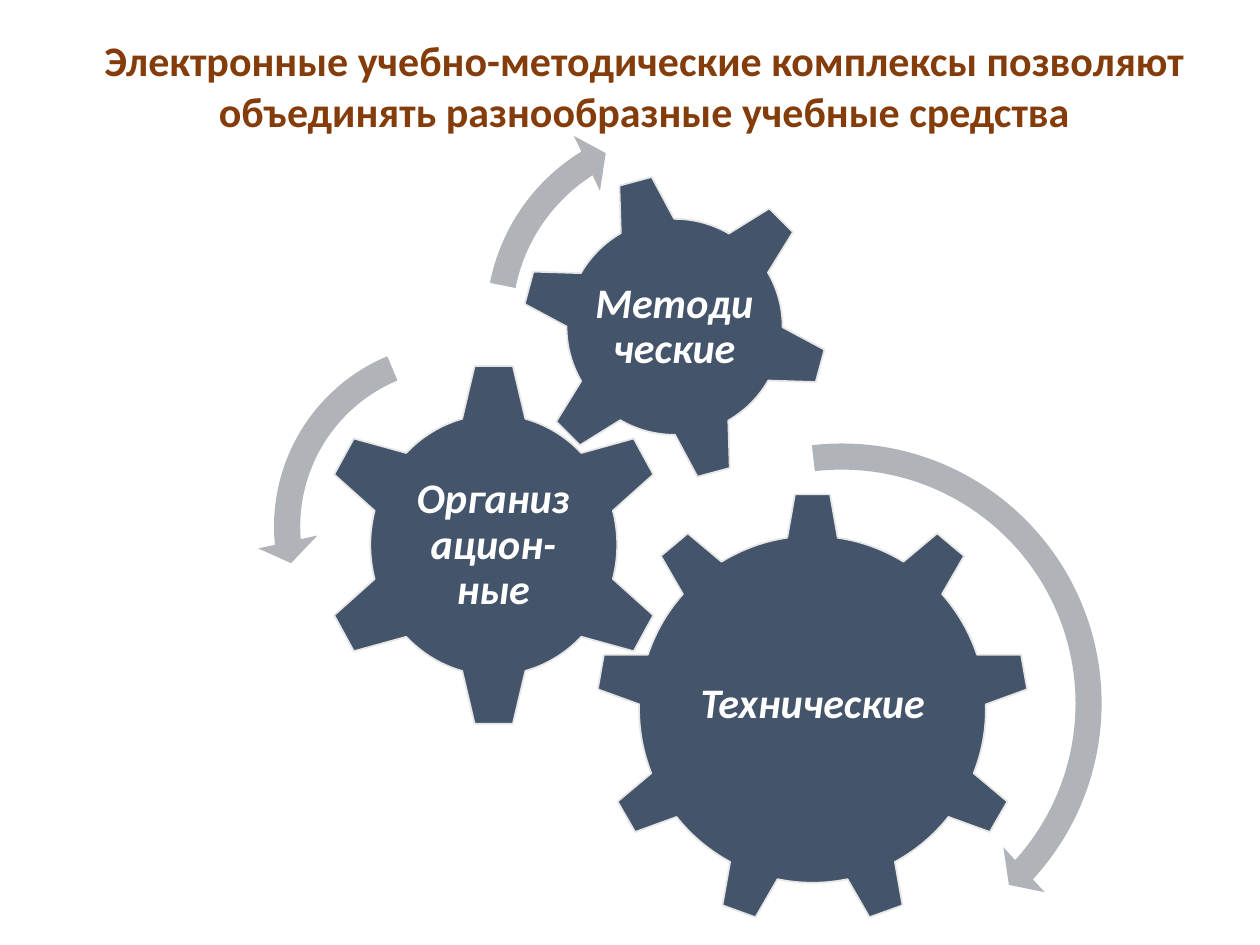
from pptx import Presentation
from pptx.dml.color import RGBColor
from pptx.enum.shapes import MSO_SHAPE
from pptx.enum.text import MSO_ANCHOR, PP_ALIGN
from pptx.util import Cm, Pt

COLORS = {"gear": "44546A", "edge": "E7E6E6", "arrow": "B0B4B9",
          "label": "FFFFFF", "title": "843C0B"}
FONT = "Calibri"

TITLE = ("Электронные учебно-методические комплексы позволяют "
         "объединять разнообразные учебные средства")
TITLE_BOX = (0.58, 0.58, 24.82, 2.31)

# Boxes are left, top, width, height in centimetres
GEARS = [
    {"text": "Технические", "shape": MSO_SHAPE.GEAR_9, "turn": 0,
     "box": (12.01, 9.93, 8.74, 8.74), "label": (13.77, 11.96, 5.23, 4.5)},
    {"text": "Организацион-ные", "shape": MSO_SHAPE.GEAR_6, "turn": 0,
     "box": (6.4, 7.29, 7.11, 7.39), "label": (8.18, 9.14, 3.53, 3.71)},
    {"text": "Методические", "shape": MSO_SHAPE.GEAR_6, "turn": 345,
     "box": (10.49, 3.48, 6.22, 6.22), "label": (11.84, 4.85, 3.51, 3.51)},
]

# Band and head widths are percentages of the size; angles are degrees
ARROWS = [
    {"shape": MSO_SHAPE.CIRCULAR_ARROW, "turn": 0, "box": (11.38, 8.59, 11.18, 11.18),
     "band": 4.7, "angles": (4.98, 42.39, 263.39), "head": 5.5},
    {"shape": MSO_SHAPE.LEFT_CIRCULAR_ARROW, "turn": 0, "box": (5.18, 6.55, 8.13, 8.13),
     "band": 6.5, "angles": (7.17, 174.82, 247.3), "head": 7.5},
    {"shape": MSO_SHAPE.CIRCULAR_ARROW, "turn": 16.1, "box": (9.45, 2.11, 8.76, 8.76),
     "band": 6, "angles": (6.57, 221.9, 175.14), "head": 7},
]
ANGLE_UNIT = 0.6  # one degree in adjustment units


def color(name):
    return RGBColor.from_string(COLORS[name])


def add_figure(page, item, fill):
    figure = page.shapes.add_shape(item["shape"], *map(Cm, item["box"]))
    figure.shadow.inherit = False
    figure.rotation = item["turn"]
    figure.fill.solid()
    figure.fill.fore_color.rgb = color(fill)
    figure.line.fill.background()
    return figure


def add_text(page, text, box, ink, italic=False):
    frame = page.shapes.add_textbox(*map(Cm, box)).text_frame
    frame.word_wrap = True
    para = frame.paragraphs[0]
    para.alignment = PP_ALIGN.CENTER
    span = para.add_run()
    span.text = text
    span.font.name = FONT
    span.font.size = Pt(24)
    span.font.bold = True
    span.font.italic = italic
    span.font.color.rgb = color(ink)
    return frame


def add_gear(page, gear):
    figure = add_figure(page, gear, "gear")
    figure.line.color.rgb = color("edge")
    figure.line.width = Pt(1)
    frame = add_text(page, gear["text"], gear["label"], "label", italic=True)
    frame.vertical_anchor = MSO_ANCHOR.MIDDLE
    frame.margin_left = frame.margin_right = Cm(0.08)
    frame.margin_top = frame.margin_bottom = Cm(0.08)
    frame.paragraphs[0].line_spacing = 0.9


def add_arrow(page, arrow):
    figure = add_figure(page, arrow, "arrow")
    angles = [angle * ANGLE_UNIT for angle in arrow["angles"]]
    values = [arrow["band"] / 100, *angles, arrow["head"] / 100]
    for index, value in enumerate(values):
        figure.adjustments[index] = value


def main():
    deck = Presentation()
    deck.slide_width, deck.slide_height = Cm(25.4), Cm(19.05)
    page = deck.slides.add_slide(deck.slide_layouts[6])
    for gear in GEARS:
        add_gear(page, gear)
    for arrow in ARROWS:
        add_arrow(page, arrow)
    add_text(page, TITLE, TITLE_BOX, "title")
    deck.save("out.pptx")


if __name__ == "__main__":
    main()
